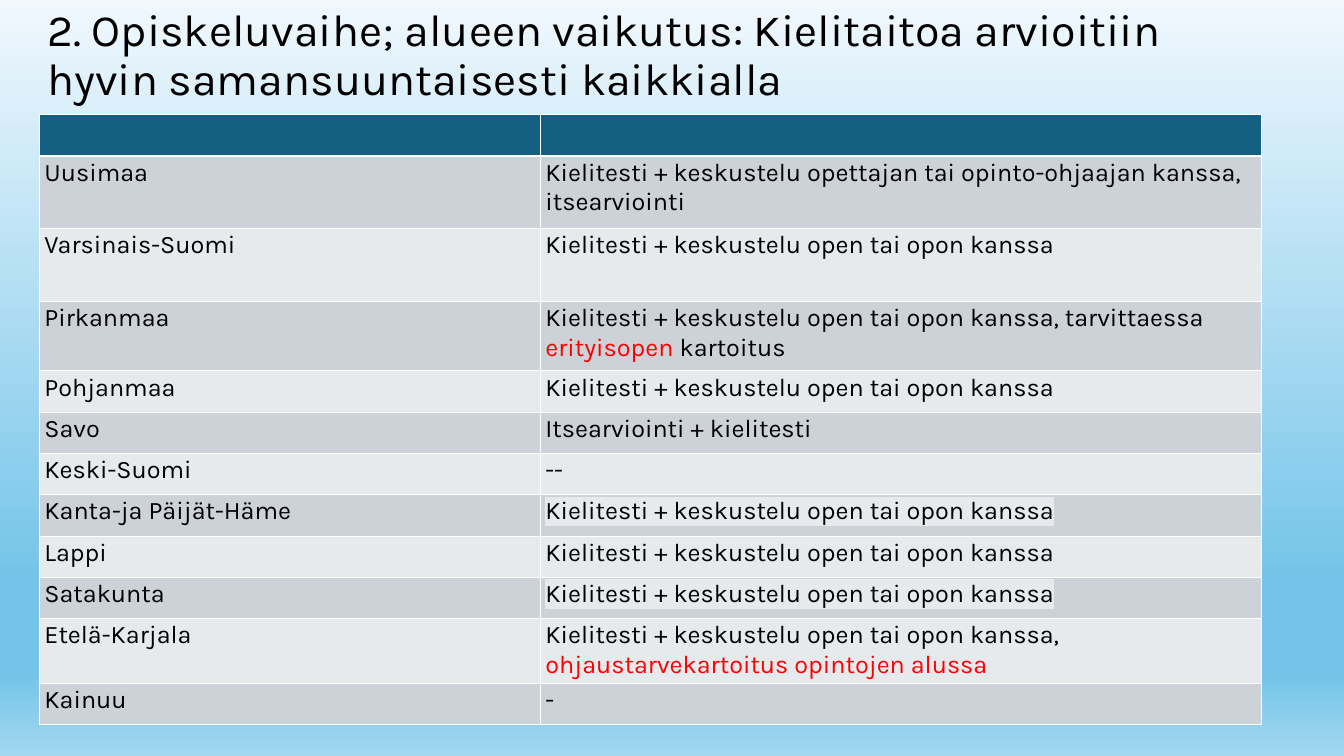
"""Builds a slide with a table of language assessment practices by region."""
import copy

import pptx
import pptx.dml.color
import pptx.enum.text
import pptx.oxml
import pptx.oxml.ns
import pptx.util
from pptx.util import Inches

COLORS = {
    "black": "000000",
    "red": "FF0000",
    "white": "FFFFFF",
    "header": "156082",
    "dark_band": "CCD2D8",
    "light_band": "E7EAED",
}
SKY = [(0, "F0F8FD"), (0.77, "74C4E9"), (0.89, "74C4E9"), (1, "A2D8F0")]
COMMON = "Kielitesti + keskustelu open tai opon kanssa"
REGIONS = [
    ("Uusimaa", 0.72, ["Kielitesti + keskustelu opettajan tai opinto-ohjaajan kanssa, itsearviointi"]),
    ("Varsinais-Suomi", 0.72, [COMMON]),
    ("Pirkanmaa", 0.69, [COMMON + ", tarvittaessa ", "erityisopen", " kartoitus"]),
    ("Pohjanmaa", 0.41, [COMMON]),
    ("Savo", 0.41, ["Itsearviointi + kielitesti"]),
    ("Keski-Suomi", 0.41, ["--"]),
    ("Kanta-ja Päijät-Häme", 0.41, [COMMON]),
    ("Lappi", 0.41, [COMMON]),
    ("Satakunta", 0.41, [COMMON]),
    ("Etelä-Karjala", 0.64, [COMMON + ", ", "ohjaustarvekartoitus opintojen alussa"]),
    ("Kainuu", 0.41, ["-"]),
]
HIGHLIGHTED = ("Kanta-ja Päijät-Häme", "Satakunta")
NAMESPACE = pptx.oxml.ns.nsdecls("a")


def format_span(span, size, color):
    span.font.name = "Karla"
    span.font.size = pptx.util.Pt(size)
    span.font.bold = False
    span.font.color.rgb = pptx.dml.color.RGBColor.from_string(COLORS[color])


def style_cell(cell, fill, edges):
    cell.margin_left = cell.margin_right = Inches(0.05)
    cell.margin_top = cell.margin_bottom = Inches(0.02)
    cell.fill.solid()
    cell.fill.fore_color.rgb = pptx.dml.color.RGBColor.from_string(COLORS[fill])
    properties = cell._tc.get_or_add_tcPr()
    for index, (side, width) in enumerate(edges.items()):
        properties.insert(index, pptx.oxml.parse_xml(
            f'<a:ln{side} {NAMESPACE} w="{pptx.util.Pt(width)}"><a:solidFill>'
            f'<a:srgbClr val="{COLORS["white"]}"/></a:solidFill></a:ln{side}>'))


deck = pptx.Presentation()
deck.slide_width = Inches(13.33)
deck.slide_height = Inches(7.5)
page = deck.slides.add_slide(deck.slide_layouts[5])

background = page.background.fill
background.gradient()
background.gradient_angle = 270
stop_list = page.element.find(".//" + pptx.oxml.ns.qn("a:gsLst"))
for stop in list(stop_list):
    stop_list.append(copy.deepcopy(stop))
for stop, (position, color) in zip(background.gradient_stops, SKY):
    stop.position = position
    stop.color.rgb = pptx.dml.color.RGBColor.from_string(color)

title = page.shapes.title
title.left, title.top = Inches(0.37), Inches(-0.01)
title.width, title.height = Inches(12.12), Inches(1.14)
frame = title.text_frame
frame.text = "2. Opiskeluvaihe; alueen vaikutus: Kielitaitoa arvioitiin hyvin samansuuntaisesti kaikkialla"
frame.word_wrap = True
frame.auto_size = pptx.enum.text.MSO_AUTO_SIZE.NONE
frame.vertical_anchor = pptx.enum.text.MSO_ANCHOR.MIDDLE
para = frame.paragraphs[0]
para.alignment = pptx.enum.text.PP_ALIGN.LEFT
para.line_spacing = 0.9
format_span(para.runs[0], 32, "black")

heights = [0.41] + [height for _, height, _ in REGIONS]
table = page.shapes.add_table(
    len(heights), 2, Inches(0.39), Inches(1.14), Inches(12.12), Inches(sum(heights))).table
for column, width in zip(table.columns, (4.97, 7.15)):
    column.width = Inches(width)
for row, height in zip(table.rows, heights):
    row.height = Inches(height)

for cell in table.rows[0].cells:
    style_cell(cell, "header", {"L": 0.75, "R": 0.75, "T": 0.75, "B": 1.45})

for number, (region, _, practice) in enumerate(REGIONS, start=1):
    band = "dark_band" if number % 2 else "light_band"
    top_edge = 1.45 if number == 1 else 0.75
    for cell, texts in zip(table.rows[number].cells, ([region], practice)):
        style_cell(cell, band, {"L": 0.75, "R": 0.75, "T": top_edge, "B": 0.75})
        para = cell.text_frame.paragraphs[0]
        for index, text in enumerate(texts):
            span = para.add_run()
            span.text = text
            format_span(span, 18, "red" if index == 1 else "black")
    if region in HIGHLIGHTED:
        fill = span.font._element.find(pptx.oxml.ns.qn("a:solidFill"))
        fill.addnext(pptx.oxml.parse_xml(
            f'<a:highlight {NAMESPACE}><a:srgbClr val="{COLORS["light_band"]}"/></a:highlight>'))

deck.save("out.pptx")
